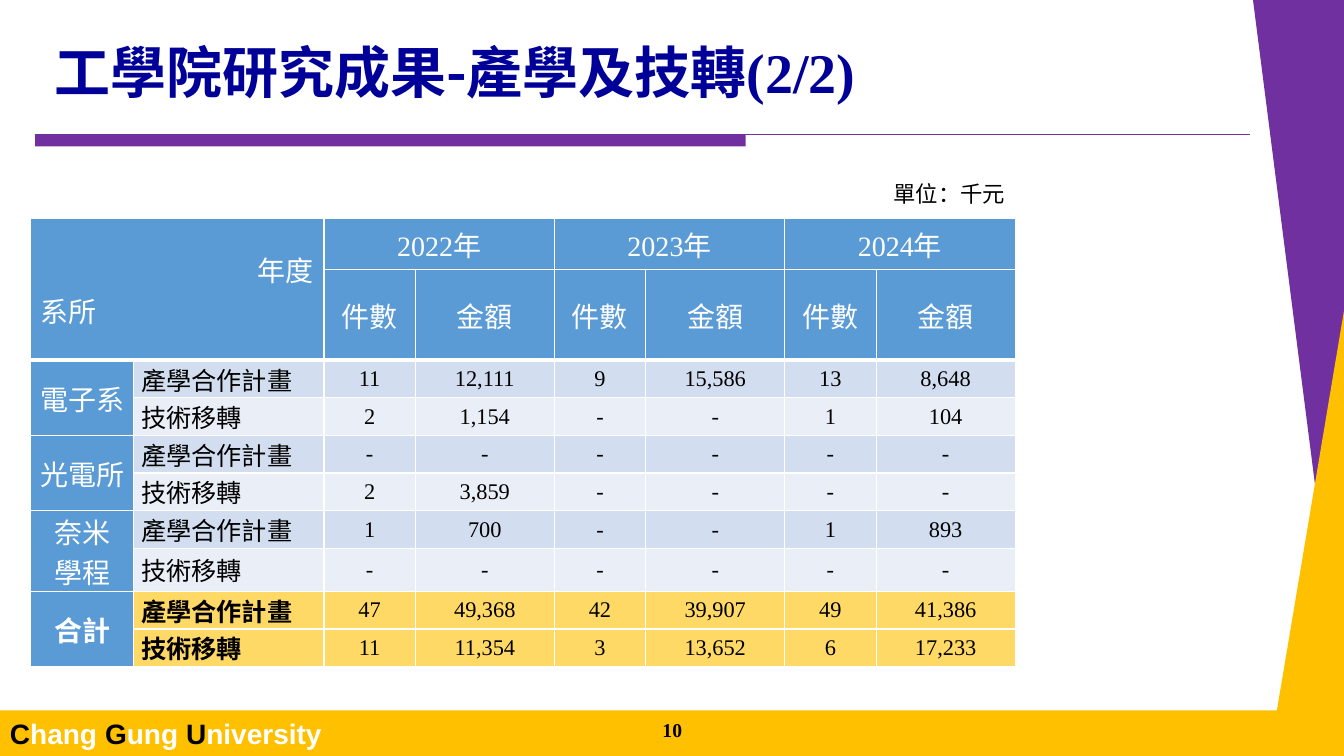
from dataclasses import dataclass

from lxml.etree import SubElement
from pptx import Presentation
from pptx.dml.color import RGBColor
from pptx.enum.shapes import MSO_CONNECTOR, MSO_SHAPE
from pptx.enum.text import MSO_ANCHOR, PP_ALIGN
from pptx.oxml import parse_xml
from pptx.oxml.ns import nsdecls, qn
from pptx.util import Pt


@dataclass(frozen=True)
class Theme:
    navy: str = "000099"
    purple: str = "7030A0"
    gold: str = "FFC000"
    blue: str = "5B9BD5"
    bands: tuple = ("D2DEEF", "EAEFF7")
    total: str = "FFD966"
    black: str = "000000"
    white: str = "FFFFFF"
    cjk: str = "Noto Sans CJK SC"
    serif: str = "Times New Roman"
    sans: str = "Arial"
    title: int = 40
    head: int = 20
    kind: int = 18
    body: int = 16
    number: int = 14


class SlideBuilder:
    def __init__(self, s, theme):
        self.s, self.theme = s, theme

    def run(self, p, text, size, color, latin, bold=False):
        r = p.add_run()
        r.text = text
        f = r.font
        f.size, f.bold, f.name = Pt(size), bold, latin
        f.color.rgb = RGBColor.from_string(color)
        SubElement(r._r.rPr, qn("a:ea"), typeface=self.theme.cjk)

    def paint(self, shape, color):
        shape.fill.solid()
        shape.fill.fore_color.rgb = RGBColor.from_string(color)
        shape.line.fill.background()
        shape.shadow.inherit = False
        return shape

    def rect(self, x, y, w, h, color):
        sp = self.s.shapes.add_shape(MSO_SHAPE.RECTANGLE, Pt(x), Pt(y), Pt(w), Pt(h))
        return self.paint(sp, color)

    def polygon(self, points, color):
        fb = self.s.shapes.build_freeform(*points[0], scale=Pt(1))
        fb.add_line_segments(points[1:], close=True)
        return self.paint(fb.convert_to_shape(), color)

    def line(self, x1, y1, x2, y2, color, width):
        cx = self.s.shapes.add_connector(
            MSO_CONNECTOR.STRAIGHT, Pt(x1), Pt(y1), Pt(x2), Pt(y2))
        cx.line.color.rgb = RGBColor.from_string(color)
        cx.line.width = Pt(width)
        SubElement(cx._element.spPr, qn("a:effectLst"))

    def title(self, x, y, w, h, runs):
        sp = self.s.shapes.title
        sp.left, sp.top, sp.width, sp.height = Pt(x), Pt(y), Pt(w), Pt(h)
        tf = sp.text_frame
        tf.word_wrap, tf.vertical_anchor = True, MSO_ANCHOR.TOP
        p = tf.paragraphs[0]
        p.alignment, p.line_spacing = PP_ALIGN.LEFT, 0.9
        for text, latin in runs:
            self.run(p, text, self.theme.title, self.theme.navy, latin, True)

    def text(self, x, y, w, h, text, size, latin, align, bold=False):
        tf = self.s.shapes.add_textbox(Pt(x), Pt(y), Pt(w), Pt(h)).text_frame
        tf.word_wrap = True
        p = tf.paragraphs[0]
        p.alignment = align
        self.run(p, text, size, self.theme.black, latin, bold)

    def footer(self, x, y, w, h, words):
        """Gold band whose words start with a black initial."""
        t = self.theme
        tf = self.rect(x, y, w, h, t.gold).text_frame
        tf.vertical_anchor = MSO_ANCHOR.MIDDLE
        p = tf.paragraphs[0]
        p.alignment = PP_ALIGN.LEFT
        for i, word in enumerate(words):
            rest = word[1:] + (" " if i < len(words) - 1 else "")
            self.run(p, word[0], t.head, t.black, t.sans, True)
            self.run(p, rest, t.head, t.white, t.sans, True)

    def table(self, x, y, widths, heights):
        frame = self.s.shapes.add_table(
            len(heights), len(widths), Pt(x), Pt(y), Pt(sum(widths)), Pt(sum(heights)))
        tbl = frame.table
        tbl.first_row = tbl.horz_banding = False
        for col, w in zip(tbl.columns, widths):
            col.width = Pt(w)
        for row, h in zip(tbl.rows, heights):
            row.height = Pt(h)
        return tbl

    def cell(self, cell, fill, top=1, bottom=1):
        """Fill a cell and give it white borders."""
        cell.fill.solid()
        cell.fill.fore_color.rgb = RGBColor.from_string(fill)
        tcPr = cell._tc.get_or_add_tcPr()
        for i, (side, width) in enumerate(zip("LRTB", (1, 1, top, bottom))):
            tcPr.insert(i, parse_xml(
                f'<a:ln{side} {nsdecls("a")} w="{Pt(width)}"><a:solidFill>'
                f'<a:srgbClr val="{self.theme.white}"/></a:solidFill></a:ln{side}>'))

    def cell_text(self, cell, lines, size, color, latin, aligns, inset, bold=False):
        cell.vertical_anchor = MSO_ANCHOR.MIDDLE
        cell.margin_left = cell.margin_right = Pt(inset[0])
        cell.margin_top = cell.margin_bottom = Pt(inset[1])
        tf = cell.text_frame
        for i, (text, align) in enumerate(zip(lines, aligns)):
            p = tf.add_paragraph() if i else tf.paragraphs[0]
            p.alignment = align
            self.run(p, text, size, color, latin, bold)


LEFT, CENTER, RIGHT = PP_ALIGN.LEFT, PP_ALIGN.CENTER, PP_ALIGN.RIGHT
YEARS = (2022, 2023, 2024)
MEASURES = ("件數", "金額")
KINDS = ("產學合作計畫", "技術移轉")
RESULTS = [
    (["電子系"], [("11", "12,111", "9", "15,586", "13", "8,648"),
                  ("2", "1,154", "-", "-", "1", "104")]),
    (["光電所"], [("-",) * 6,
                  ("2", "3,859", "-", "-", "-", "-")]),
    (["奈米", "學程"], [("1", "700", "-", "-", "1", "893"),
                        ("-",) * 6]),
    (["合計"], [("47", "49,368", "42", "39,907", "49", "41,386"),
                ("11", "11,354", "3", "13,652", "6", "17,233")]),
]


def fill_results(b, tbl):
    t = b.theme
    last = len(tbl.rows) - 1
    for row in range(last + 1):
        for col in range(len(tbl.columns)):
            if row < 2 or col == 0:
                fill = t.blue
            else:
                fill = t.total if row >= last - 1 else t.bands[row % 2]
            b.cell(tbl.cell(row, col), fill, 3 if row == 2 else 1, 3 if row == 1 else 1)

    def head(cell, lines, aligns=(CENTER, CENTER), inset=(7.2, 3.6), bold=False):
        b.cell_text(cell, lines, t.head, t.white, t.serif, aligns, inset, bold)

    tbl.cell(0, 0).merge(tbl.cell(1, 1))
    head(tbl.cell(0, 0), ("年度", "系所"), (RIGHT, LEFT))
    for i, year in enumerate(YEARS):
        col = 2 + 2 * i
        tbl.cell(0, col).merge(tbl.cell(0, col + 1))
        head(tbl.cell(0, col), [f"{year}年"])
        for j, measure in enumerate(MEASURES):
            head(tbl.cell(1, col + j), [measure])

    for i, (department, records) in enumerate(RESULTS):
        top = 2 + 2 * i
        is_total = i == len(RESULTS) - 1
        tbl.cell(top, 0).merge(tbl.cell(top + 1, 0))
        head(tbl.cell(top, 0), department, inset=(5.4, 0), bold=is_total)
        for row, (kind, values) in enumerate(zip(KINDS, records), top):
            b.cell_text(tbl.cell(row, 1), [kind], t.kind, t.black, t.cjk,
                        [LEFT], (5.4, 0), is_total)
            for col, value in enumerate(values, 2):
                b.cell_text(tbl.cell(row, col), [value], t.body, t.black, t.serif,
                            [CENTER], (1.4, 0))


def main():
    prs = Presentation()
    prs.slide_width, prs.slide_height = Pt(960), Pt(540)
    t = Theme()
    b = SlideBuilder(prs.slides.add_slide(prs.slide_layouts[5]), t)
    b.footer(0, 507.5, 960, 32.5, ("Chang", "Gung", "University"))
    b.polygon([(960, 507.5), (895, 0), (960, 0)], t.purple)
    b.polygon([(960, 222), (911.8, 508), (960, 508)], t.gold)
    b.rect(25, 96, 507.6, 8.6, t.purple)
    b.line(25, 96, 893, 96, t.purple, 0.75)
    b.title(31.7, 28.8, 666, 90,
            [("工學院研究成果-產學及技轉", t.cjk), ("(2/2)", t.serif)])
    b.text(621.4, 125.3, 103.7, 26.6, "單位：千元", t.body, t.cjk, RIGHT)
    tbl = b.table(22, 156.3, [73.4, 136] + [65.3, 99.3] * len(YEARS),
                  [36, 65] + [26.9] * 5 + [30.7] + [26.9] * 2)
    fill_results(b, tbl)
    b.text(380.9, 509, 198.7, 20.2, "10", t.number, t.serif, CENTER, True)
    prs.save("out.pptx")


if __name__ == "__main__":
    main()
